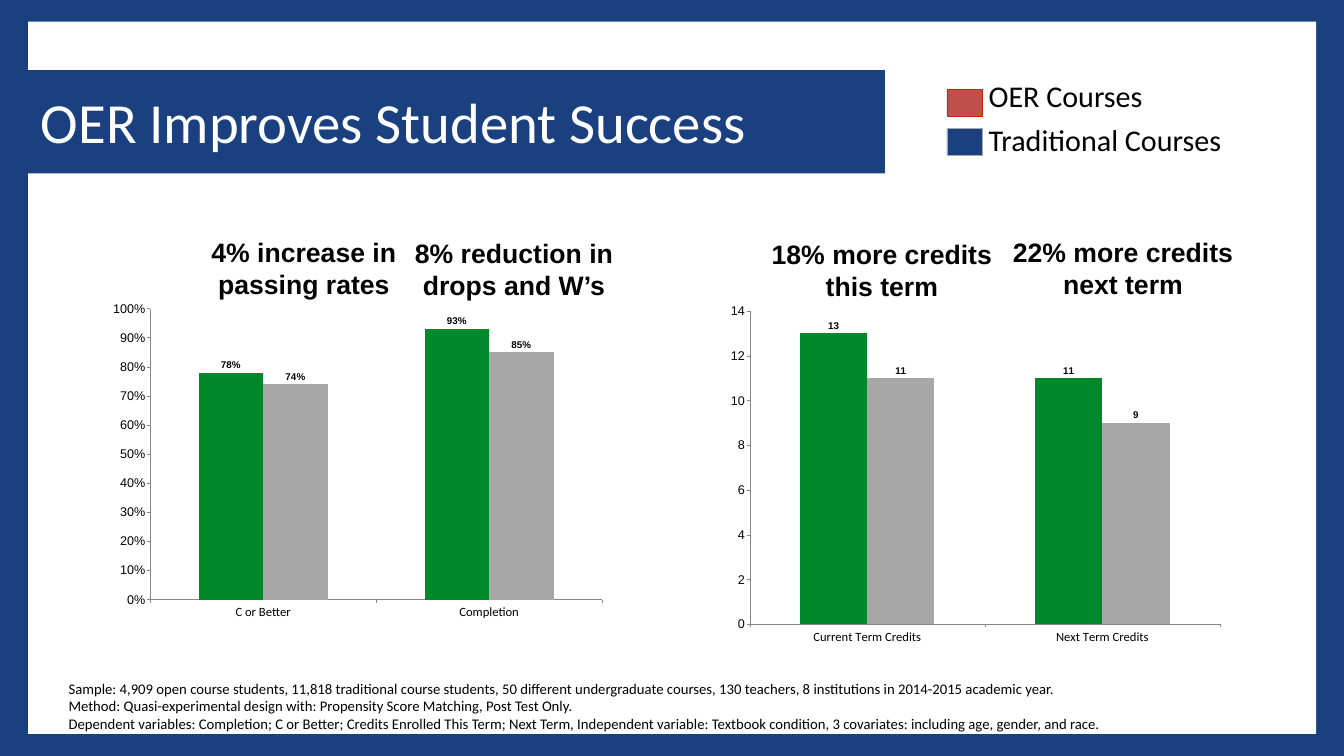
import pptx
import pptx.chart.data
import pptx.dml.color
import pptx.enum.chart
import pptx.enum.shapes
import pptx.enum.text
import pptx.util

Inches, Pt = pptx.util.Inches, pptx.util.Pt
Anchor, Align = pptx.enum.text.MSO_ANCHOR, pptx.enum.text.PP_ALIGN
NAVY, GREEN, GREY = "1B4080", "00882B", "A7A7A7"


def paint(fill, color):
    fill.solid()
    fill.fore_color.rgb = pptx.dml.color.RGBColor.from_string(color)


def write(shape, text, size, font="Calibri", color="000000", bold=False,
          align=Align.LEFT, anchor=Anchor.TOP, pad=(0.24, 0.12),
          line=None, after=None):
    """Fill a shape with text, one paragraph per line."""
    frame = shape.text_frame
    frame.word_wrap = True
    frame.auto_size = pptx.enum.text.MSO_AUTO_SIZE.NONE
    frame.vertical_anchor = anchor
    frame.margin_left = frame.margin_right = Inches(pad[0])
    frame.margin_top = frame.margin_bottom = Inches(pad[1])
    frame.text = text
    for para in frame.paragraphs:
        para.alignment = align
        para.line_spacing = line
        para.space_after = after
        run = para.runs[0].font
        run.name, run.size, run.bold = font, Pt(size), bold
        paint(run.fill, color)


deck = pptx.Presentation()
deck.slide_width, deck.slide_height = Inches(26.67), Inches(15)
slide = deck.slides.add_slide(deck.slide_layouts[5])
shapes = slide.shapes
title = shapes.title
tree = title.element.getparent()
legend = shapes.add_group_shape()

# Frame, title band and legend keys
for home, at, color, edge in [
    (shapes, (-0.21, -0.16, 27.09, 15.32), NAVY, None),
    (shapes, (0.56, 0.43, 25.56, 14.13), "FFFFFF", None),
    (shapes, (0.51, 1.39, 17.05, 2.05), NAVY, None),
    (legend.shapes, (18.79, 1.77, 0.71, 0.53), "C0504D", "C82506"),
    (legend.shapes, (18.79, 2.55, 0.71, 0.53), NAVY, GREY),
]:
    rect = home.add_shape(pptx.enum.shapes.MSO_SHAPE.RECTANGLE, *map(Inches, at))
    rect.shadow.inherit = False
    paint(rect.fill, color)
    if edge:
        paint(rect.line.fill, edge)
        rect.line.width = Pt(0.75)
    else:
        rect.line.fill.background()

# Title, raised above the band
tree.append(title.element)
title.left, title.top = Inches(0.75), Inches(1.46)
title.width, title.height = Inches(23.32), Inches(1.89)
write(title, "OER Improves Student Success", 81, color="FFFFFF",
      anchor=Anchor.MIDDLE, pad=(0.06, 0.06))

# Charts
for at, cats, rows, style, top, step in [
    ((2.04, 5.85, 10.11, 6.58), ["C or Better", "Completion"],
     [(0.78, 0.93), (0.74, 0.85)], "0%", 1, 0.1),
    ((14.3, 5.89, 10.11, 7.04), ["Current Term Credits", "Next Term Credits"],
     [(13, 11), (11, 9)], "General", 14, 2),
]:
    data = pptx.chart.data.CategoryChartData(number_format=style)
    data.categories = cats
    for num, row in enumerate(rows, 1):
        data.add_series(f"Series {num}", row)
    kind = pptx.enum.chart.XL_CHART_TYPE.COLUMN_CLUSTERED
    chart = shapes.add_chart(kind, *map(Inches, at), data).chart
    chart.has_legend = chart.has_title = False
    chart.font.name, chart.font.size = "Arial", Pt(18)
    paint(chart.font.fill, "000000")

    plot = chart.plots[0]
    plot.gap_width, plot.overlap, plot.vary_by_categories = 150, 0, False
    for series, color in zip(plot.series, (GREEN, GREY)):
        paint(series.format.fill, color)
        labels = series.data_labels
        labels.show_value = True
        labels.position = pptx.enum.chart.XL_LABEL_POSITION.OUTSIDE_END
        labels.number_format, labels.number_format_is_linked = style, False
        labels.font.name, labels.font.size = "Arial", Pt(14)
        labels.font.bold = True
        paint(labels.font.fill, "000000")

    for axis, font in ((chart.category_axis, "Calibri"), (chart.value_axis, "Arial")):
        axis.has_major_gridlines = False
        axis.major_tick_mark = pptx.enum.chart.XL_TICK_MARK.OUTSIDE
        axis.tick_labels.font.name = font
        axis.tick_labels.font.size = Pt(18)
        paint(axis.format.line.fill, "868686")
    scale = chart.value_axis
    scale.minimum_scale, scale.maximum_scale, scale.major_unit = 0, top, step
    scale.tick_labels.number_format = style
    scale.tick_labels.number_format_is_linked = False

# Study notes
note = shapes.add_textbox(*map(Inches, (1.12, 13.36, 24.43, 1.47)))
write(note, "\n".join([
    "Sample: 4,909 open course students, 11,818 traditional course students, "
    "50 different undergraduate courses, 130 teachers, 8 institutions in "
    "2014-2015 academic year.",
    "Method: Quasi-experimental design with: Propensity Score Matching, "
    "Post Test Only.",
    "Dependent variables: Completion; C or Better; Credits Enrolled This Term; "
    "Next Term, Independent variable: Textbook condition, 3 covariates: "
    "including age, gender, and race.",
]), 21)

# Headlines above the columns
for left, top, width, text in [
    (7.74, 4.58, 4.92, "8% reduction in drops and W’s"),
    (3.72, 4.57, 4.62, "4% increase in passing rates"),
    (15.04, 4.61, 4.92, "18% more credits this term"),
    (19.73, 4.57, 5.11, "22% more credits next term"),
]:
    head = shapes.add_textbox(*map(Inches, (left, top, width, 1.52)))
    write(head, text, 38, font="Arial", bold=True, align=Align.CENTER)

# Legend wording
tree.append(legend.element)
names = legend.shapes.add_textbox(*map(Inches, (19.52, 1.57, 6.59, 1.68)))
write(names, "OER Courses\nTraditional Courses", 43, pad=(0.1, 0.05),
      line=0.9, after=Pt(16.7))

deck.save("out.pptx")
